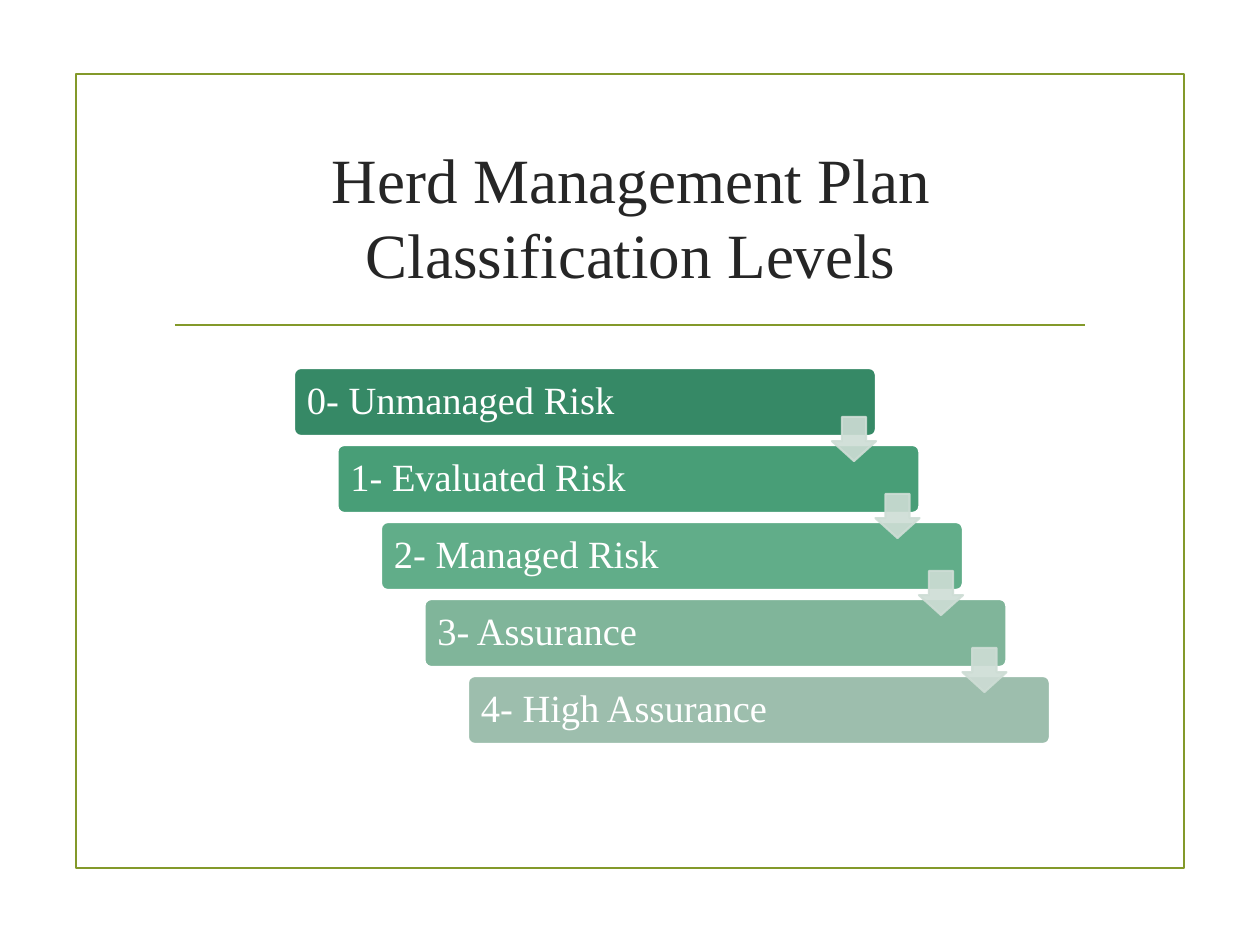
from dataclasses import dataclass

from lxml import etree
from pptx import Presentation
from pptx.dml.color import RGBColor
from pptx.enum.shapes import MSO_CONNECTOR, MSO_SHAPE
from pptx.enum.text import MSO_ANCHOR, PP_ALIGN
from pptx.oxml.ns import qn
from pptx.util import Pt

PX = 914400 // 126  # EMU per px
RECT, ROUND_RECT = MSO_SHAPE.RECTANGLE, MSO_SHAPE.ROUNDED_RECTANGLE
DOWN_ARROW = MSO_SHAPE.DOWN_ARROW
STRAIGHT = MSO_CONNECTOR.STRAIGHT
MIDDLE, CENTER, LEFT = MSO_ANCHOR.MIDDLE, PP_ALIGN.CENTER, PP_ALIGN.LEFT


@dataclass(frozen=True)
class Theme:
    font: str = "Times New Roman"
    title_size: int = 36
    level_size: int = 22
    line_width: float = 1.25
    title: str = "262626"
    white: str = "FFFFFF"
    frame: str = "83992A"
    arrow: str = "CEDDD5"
    arrow_opacity: int = 90


THEME = Theme()
LEVELS = [
    ("0- Unmanaged Risk", "368966"),
    ("1- Evaluated Risk", "489E77"),
    ("2- Managed Risk", "61AD89"),
    ("3- Assurance", "80B59A"),
    ("4- High Assurance", "9DBEAD"),
]


def emu(*lengths):
    return [round(n * PX) for n in lengths]


def set_line(line, color):
    line.color.rgb = RGBColor.from_string(color)
    line.width = Pt(THEME.line_width)


def add_box(slide, kind, box, fill, line):
    s = slide.shapes.add_shape(kind, *emu(*box))
    s.shadow.inherit = False
    if fill:
        s.fill.solid()
        s.fill.fore_color.rgb = RGBColor.from_string(fill)
    else:
        s.fill.background()
    set_line(s.line, line)
    return s


def set_text(s, text, size, color, align):
    tf = s.text_frame
    tf.text = text
    tf.word_wrap = True
    tf.vertical_anchor = MIDDLE
    p = tf.paragraphs[0]
    p.alignment = align
    for r in p.runs:
        r.font.name = THEME.font
        r.font.size = Pt(size)
        r.font.color.rgb = RGBColor.from_string(color)
    return tf


def make_translucent(s, percent):
    for color in s._element.spPr.iter(qn("a:srgbClr")):
        etree.SubElement(color, qn("a:alpha"), val=str(percent * 1000))


def add_frame(slide, box):
    x, y, w, _ = box
    add_box(slide, RECT, box, None, THEME.frame)
    # Rule under the title
    inset, rule_y = 99, y + 251
    rule = slide.shapes.add_connector(
        STRAIGHT, *emu(x + inset, rule_y, x + w - inset, rule_y))
    set_line(rule.line, THEME.frame)
    etree.SubElement(rule._element.spPr, qn("a:effectLst"))


def add_title(slide, box):
    s = slide.shapes.title
    s.left, s.top, s.width, s.height = emu(*box)
    set_text(s, "Herd Management Plan\vClassification Levels",
             THEME.title_size, THEME.title, CENTER)


def add_staircase(slide, box):
    x, y, w, h = box
    bar_w, bar_h, arrow = 582, 68, 44
    steps = len(LEVELS) - 1
    dx, dy = (w - bar_w) / steps, (h - bar_h) / steps

    # Level bars
    for i, (text, color) in enumerate(LEVELS):
        bar = add_box(slide, ROUND_RECT, (x + i * dx, y + i * dy, bar_w, bar_h),
                      color, THEME.white)
        bar.adjustments[0] = 0.1
        tf = set_text(bar, text, THEME.level_size, THEME.white, LEFT)
        tf.margin_left = tf.margin_right = tf.margin_top = tf.margin_bottom = 11 * PX
        tf.paragraphs[0].line_spacing = 0.9

    # Arrows, flush with the right end of each bar but the last
    for i in range(steps):
        s = add_box(slide, DOWN_ARROW,
                    (x + i * dx + bar_w - arrow, y + i * dy + 49, arrow, arrow),
                    THEME.arrow, THEME.arrow)
        s.adjustments[0], s.adjustments[1] = 0.55, 0.45
        make_translucent(s, THEME.arrow_opacity)


def main():
    prs = Presentation()
    prs.slide_width, prs.slide_height = emu(1260, 945)
    slide = prs.slides.add_slide(prs.slide_layouts[5])  # Title Only
    add_frame(slide, (76, 74, 1108, 794))
    add_title(slide, (162, 126, 938, 180))
    add_staircase(slide, (294, 368, 756, 376))
    prs.save("out.pptx")


if __name__ == "__main__":
    main()
